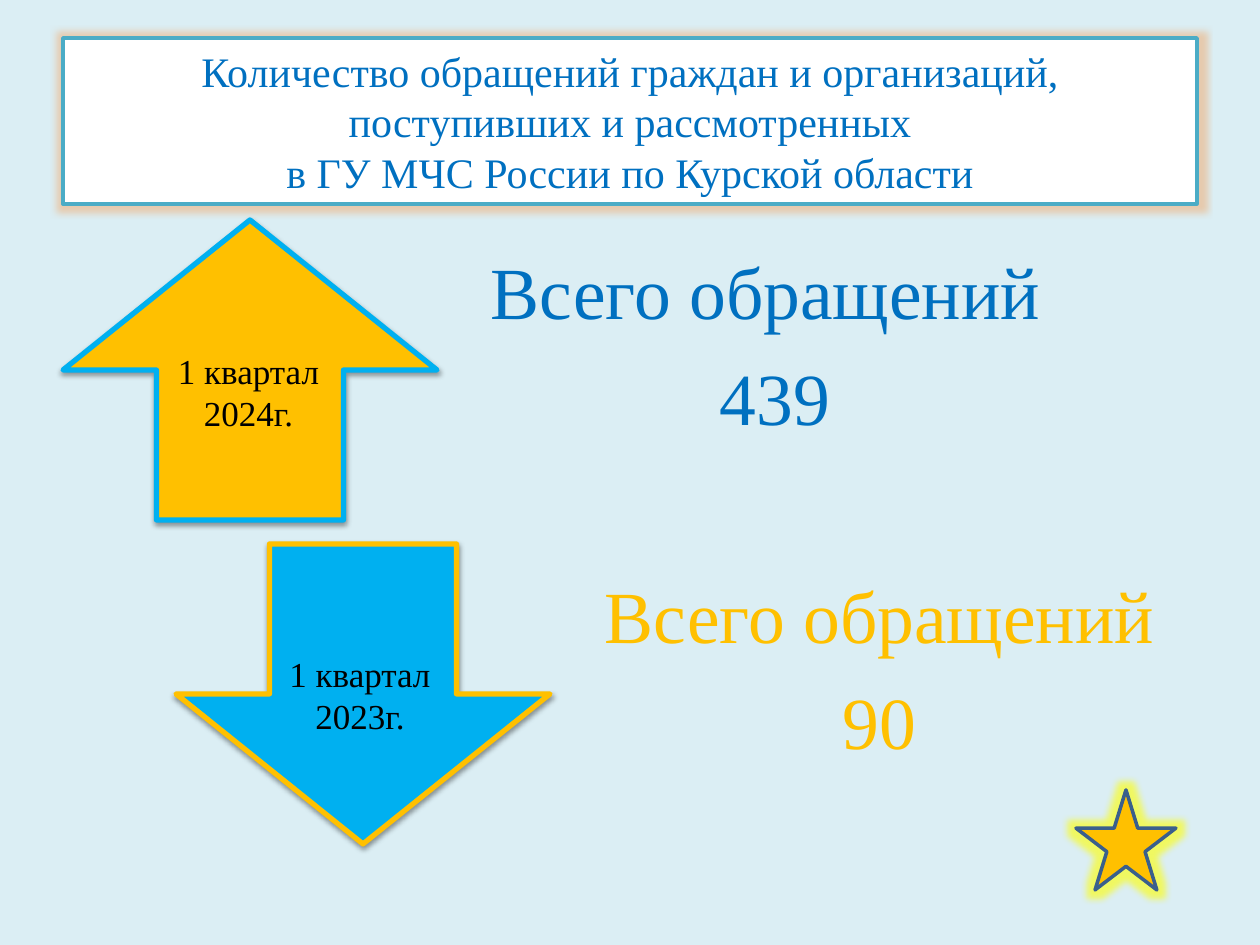
import pptx
import pptx.dml.color
import pptx.enum.shapes
import pptx.enum.text
import pptx.oxml
import pptx.oxml.ns
import pptx.util

Shape = pptx.enum.shapes.MSO_SHAPE
Pt = pptx.util.Pt

THEME = {
    "font": "Times New Roman",
    "page": "DBEEF4", "panel": "FFFFFF", "panel_line": "4BACC6",
    "blue": "0070C0", "sky": "00B0F0", "gold": "FFC000",
    "ink": "000000", "star_line": "3A5F8C",
    "title_glow": "F79646", "star_glow": "FFFF00",
    "title_size": 24, "total_size": 42, "label_size": 20,
}
TITLE = ("Количество обращений граждан и организаций, поступивших и рассмотренных\v"
         "в ГУ МЧС России по Курской области")
QUARTERS = [
    {"arrow": Shape.UP_ARROW, "at": (63, 220), "fill": "gold", "line": "sky",
     "total": ["Всего обращений", " 439"], "total_color": "blue", "total_left": 448,
     "label": "1 квартал 2024г.", "label_at": (164, 343, 169, 97)},
    {"arrow": Shape.DOWN_ARROW, "at": (176, 544), "fill": "sky", "line": "gold",
     "total": ["Всего обращений", "90"], "total_color": "gold", "total_left": 562,
     "label": "1 квартал 2023г.", "label_at": (273, 646, 174, 97)},
]
ARROW_WIDTH, ROW_HEIGHT, TOTAL_WIDTH, TOTAL_INSET = 374, 300, 635, 42

SHADOW = ('<a:outerShdw {ns} blurRad="40000" dist="20000" dir="5400000" rotWithShape="0">'
          '<a:srgbClr val="{color}"><a:alpha val="38000"/></a:srgbClr></a:outerShdw>')
GLOW = ('<a:glow {ns} rad="101600"><a:srgbClr val="{color}">'
        '<a:alpha val="{alpha}"/></a:srgbClr></a:glow>')


def px(length):
    return pptx.util.Emu(round(length * 914400 / 126))


def color(name):
    return pptx.dml.color.RGBColor.from_string(THEME[name])


def place(shape, *bounds):
    for side, length in zip(("left", "top", "width", "height"), bounds):
        setattr(shape, side, px(length))


def paint(shape, fill, line, width, effect, **values):
    """Fill and outline a shape, and give it one shadow or glow."""
    shape.fill.solid()
    shape.fill.fore_color.rgb = color(fill)
    shape.line.color.rgb = color(line)
    shape.line.width = Pt(width)
    shape.shadow.inherit = False
    effects = shape._element.spPr.find(pptx.oxml.ns.qn("a:effectLst"))
    markup = effect.format(ns=pptx.oxml.ns.nsdecls("a"), **values)
    effects.append(pptx.oxml.parse_xml(markup))


def write(shape, lines, size, ink, frame_format=None, paragraph_format=None):
    frame = shape.text_frame
    frame.word_wrap = True
    for name, value in (frame_format or {}).items():
        setattr(frame, name, value)
    for index, line in enumerate(lines):
        para = frame.paragraphs[0] if index == 0 else frame.add_paragraph()
        para.text = line
        para.alignment = pptx.enum.text.PP_ALIGN.CENTER
        for name, value in (paragraph_format or {}).items():
            setattr(para, name, value)
        for span in para.runs:
            span.font.name = THEME["font"]
            span.font.size = Pt(THEME[size])
            span.font.color.rgb = color(ink)


def add_quarter(page, quarter):
    left, top = quarter["at"]
    arrow = page.shapes.add_shape(
        quarter["arrow"], *map(px, (left, top, ARROW_WIDTH, ROW_HEIGHT)))
    paint(arrow, quarter["fill"], quarter["line"], 3, SHADOW, color=THEME["ink"])
    total = page.shapes.add_textbox(
        *map(px, (quarter["total_left"], top, TOTAL_WIDTH, ROW_HEIGHT)))
    inset = px(TOTAL_INSET)
    write(total, quarter["total"], "total_size", quarter["total_color"],
          {"vertical_anchor": pptx.enum.text.MSO_ANCHOR.MIDDLE, "margin_top": 0,
           "margin_left": inset, "margin_right": inset, "margin_bottom": inset},
          {"line_spacing": 0.9, "space_after": Pt(15)})


def main():
    deck = pptx.Presentation()
    deck.slide_width, deck.slide_height = px(1260), px(945)
    page = deck.slides.add_slide(deck.slide_layouts[5])
    page.background.fill.solid()
    page.background.fill.fore_color.rgb = color("page")

    title = page.shapes.title
    place(title, 63, 38, 1134, 166)
    paint(title, "panel", "panel_line", 2, GLOW, color=THEME["title_glow"], alpha=40000)
    write(title, [TITLE], "title_size", "blue",
          {"vertical_anchor": pptx.enum.text.MSO_ANCHOR.MIDDLE})

    for quarter in QUARTERS:
        add_quarter(page, quarter)
    for quarter in QUARTERS:
        label = page.shapes.add_textbox(*map(px, quarter["label_at"]))
        write(label, [quarter["label"]], "label_size", "ink",
              {"auto_size": pptx.enum.text.MSO_AUTO_SIZE.SHAPE_TO_FIT_TEXT})

    star = page.shapes.add_shape(Shape.STAR_5_POINT, *map(px, (1076, 790, 100, 100)))
    paint(star, "gold", "star_line", 2, GLOW, color=THEME["star_glow"], alpha=60000)
    deck.save("out.pptx")


if __name__ == "__main__":
    main()
